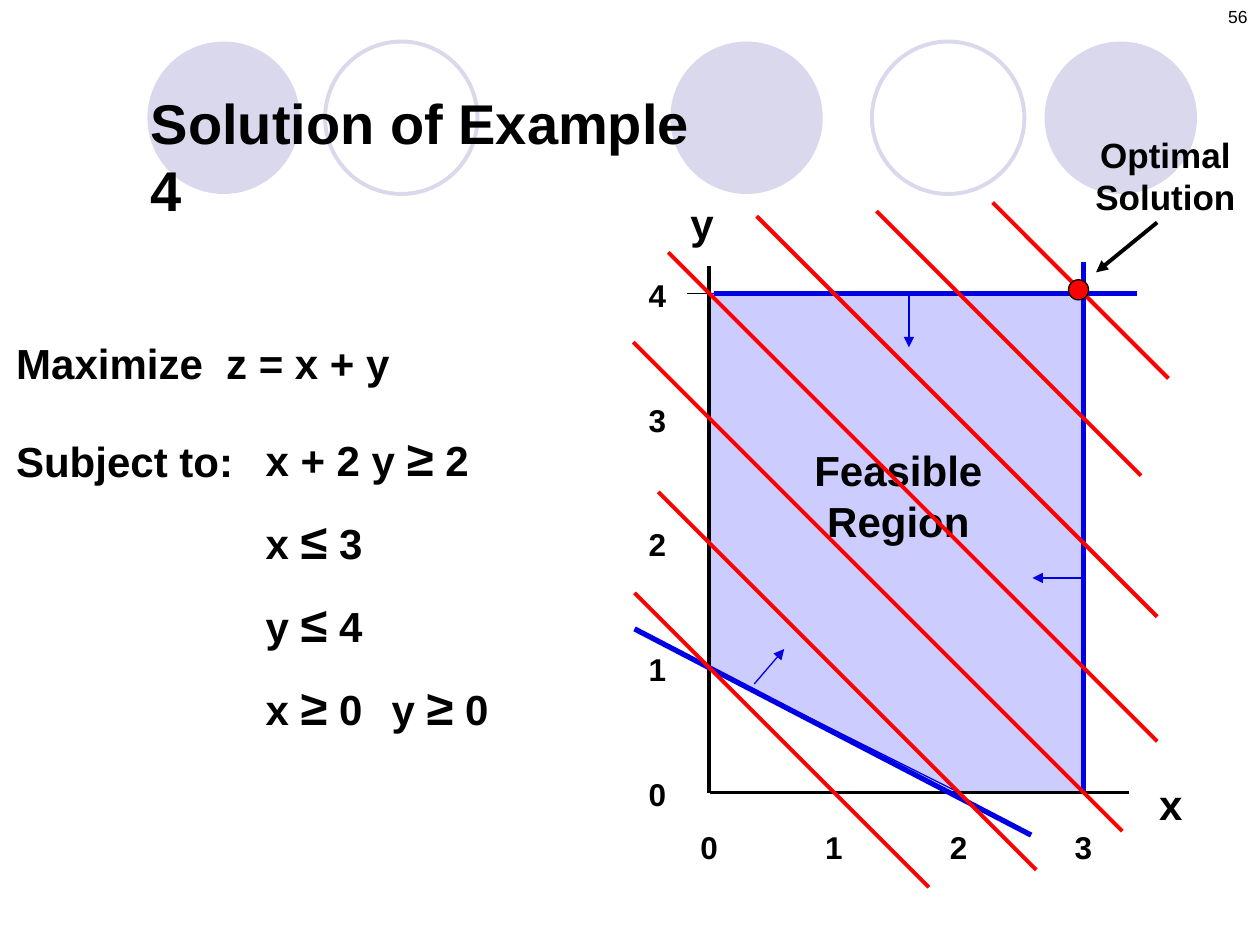
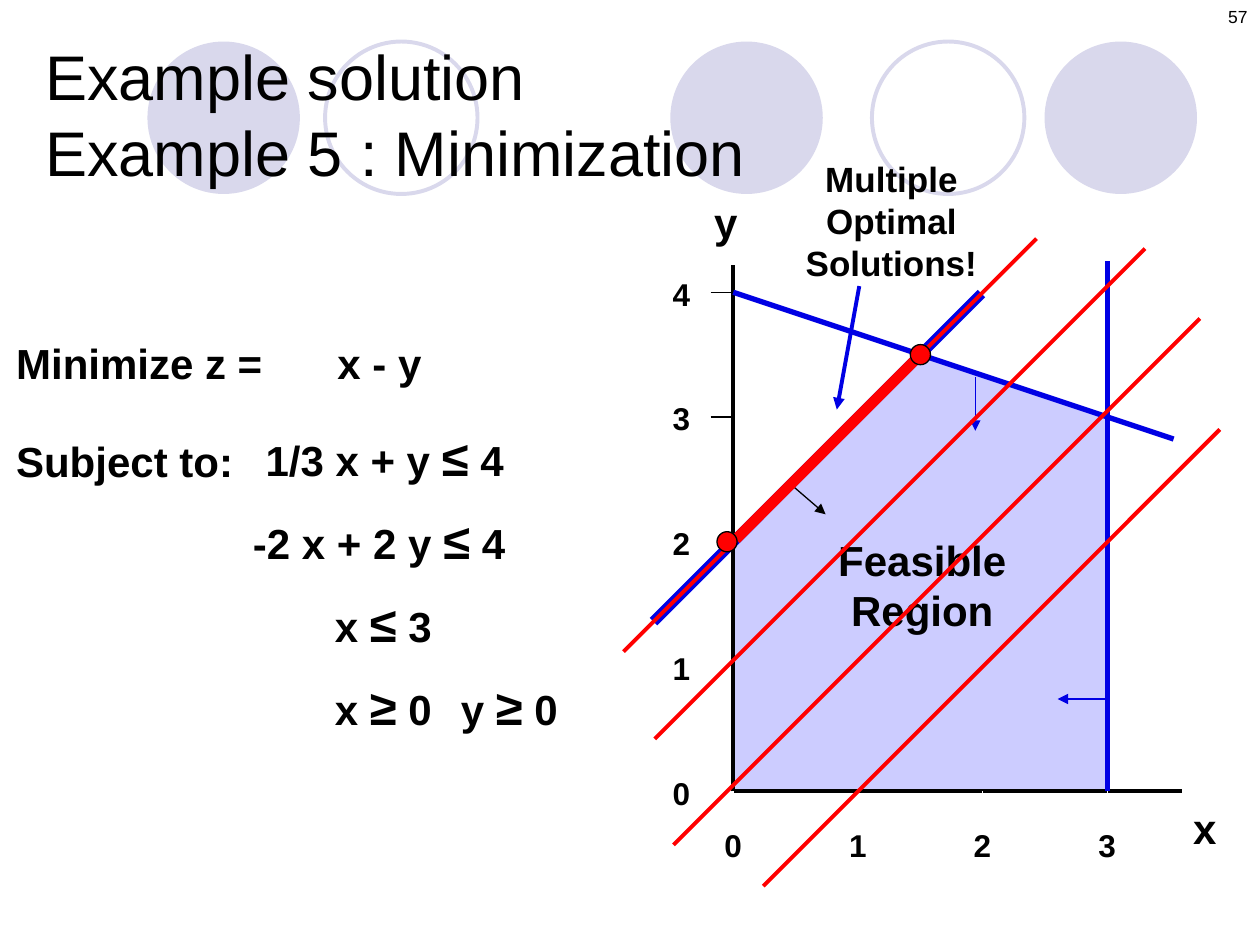
"""Builds two slides that solve linear programs graphically."""
from itertools import groupby

from lxml import etree
from pptx import Presentation
from pptx.dml.color import RGBColor
from pptx.enum.shapes import MSO_CONNECTOR, MSO_SHAPE
from pptx.enum.text import MSO_ANCHOR, PP_ALIGN
from pptx.oxml.ns import qn
from pptx.util import Inches, Pt

STRAIGHT, OVAL = MSO_CONNECTOR.STRAIGHT, MSO_SHAPE.OVAL
LEFT, CENTER, RIGHT = PP_ALIGN.LEFT, PP_ALIGN.CENTER, PP_ALIGN.RIGHT
TOP = MSO_ANCHOR.TOP

BLACK = RGBColor.from_string("000000")
WHITE = RGBColor.from_string("FFFFFF")
BLUE = RGBColor.from_string("0000E4")
RED = RGBColor.from_string("FF0000")
LILAC = RGBColor.from_string("D9D8EC")
REGION = RGBColor.from_string("CCCCFF")

FONT = "Arial"
UNIT = 0.99
THIN, MEDIUM, THICK, BAND = 0.75, 2.25, 3, 6
CIRCLE, DOT = 1.21, 0.16
FILLED_CIRCLES = [1.17, 5.32, 8.29]
OPEN_CIRCLES = [2.58, 6.92]
DOWN, INWARD = (0, -0.43), (-0.39, 0)
FORMULA_TOP, FORMULA_STEP = 3.34, 0.66

SLIDES = [
    {
        "number": "56",
        "title": (["Solution of Example 4"], (1.1, 0.65, 4.6, 1.15), 32, True),
        "origin": (5.63, 6.29),
        "x_axis": 3.33,
        "x_name": (3.47, -0.16),
        "black_ticks": [4],
        "region": [(0, 1), (2, 0), (3, 0), (3, 4), (0, 4)],
        "region_line": BLUE,
        "region_label": 2.81,
        "constraints": [(0, 4, 0.04, 3.43, THICK), (-0.52, 1, -0.6, 2.58, THICK)],
        "arrows": [
            ((1.6, 4), DOWN, BLUE, THIN),
            ((2.98, 1.72), INWARD, BLUE, THIN),
            ((0.36, 0.87), (0.24, 0.28), BLUE, THIN),
            ((3.59, 4.57), (-0.49, -0.4), BLACK, MEDIUM),
        ],
        "slope": -1,
        "levels": [(1, -0.6, 1.76), (2, -0.41, 2.62), (3, -0.61, 3.31),
                   (4, -0.33, 3.59), (5, 0.38, 3.59), (6, 1.34, 3.46),
                   (7, 2.27, 3.68)],
        "optimal_edge": [],
        "optima": [(2.96, 4.03)],
        "callout": ("Optimal Solution", (8.5, 1.01, 1.5, 0.77)),
        "goal": "Maximize  z = x + y",
        "formulas": [("x + 2 y ≥ 2", 2.01), ("x ≤ 3", 2.01), ("y ≤ 4", 2.01),
                     ("x ≥ 0\ty ≥ 0", 2.01)],
    },
    {
        "number": "57",
        "title": (["Example solution", "Example 5 : Minimization"],
                  (0.26, 0.25, 5.81, 1.31), 36, False),
        "origin": (5.82, 6.28),
        "x_axis": 3.56,
        "x_name": (3.55, 0.04),
        "black_ticks": [3, 4],
        "region": [(0, 0), (0, 2), (1.5, 3.5), (3, 3), (3, 0)],
        "region_line": None,
        "region_label": 2.09,
        "constraints": [(-1 / 3, 4, 0, 3.53, THICK), (1, 2, -0.64, 1.99, BAND)],
        "arrows": [
            ((1.94, 3.32), DOWN, BLUE, THIN),
            ((2.99, 0.74), INWARD, BLUE, THIN),
            ((0.45, 2.47), (0.29, -0.25), BLACK, THIN),
            ((1.01, 4.05), (-0.18, -0.99), BLUE, MEDIUM),
        ],
        "slope": 1,
        "levels": [(2, -0.88, 2.43), (1.05, -0.63, 3.3), (0.05, -0.48, 3.74),
                   (-1, 0.24, 3.9)],
        "optimal_edge": [(1, 2, 0.02, 1.46, BAND)],
        "optima": [(-0.05, 2), (1.5, 3.5)],
        "callout": ("Multiple Optimal Solutions!", (6.29, 1.2, 1.57, 1.1)),
        "goal": "Minimize z =\tx - y",
        "formulas": [("1/3 x + y ≤ 4", 2.01), ("-2 x + 2 y ≤ 4", 1.91),
                     ("x ≤ 3", 2.56), ("x ≥ 0\ty ≥ 0", 2.56)],
    },
]


def add_text(s, lines, box, size, bold=True, align=LEFT, tab=None):
    tf = s.shapes.add_textbox(*map(Inches, box)).text_frame
    tf.word_wrap = True
    tf.vertical_anchor = TOP
    if align == LEFT:
        tf.margin_right = 0
    for i, line in enumerate(lines):
        p = tf.paragraphs[0] if i == 0 else tf.add_paragraph()
        p.alignment = align
        if tab:
            tabs = etree.SubElement(p._p.get_or_add_pPr(), qn("a:tabLst"))
            etree.SubElement(tabs, qn("a:tab"), pos=str(Inches(tab)), algn="l")
        for is_sign, chars in groupby(line, lambda c: c in "≤≥"):
            r = p.add_run()
            r.text = "".join(chars)
            r.font.name = FONT
            r.font.size = Pt(size + 4 if is_sign else size)
            r.font.bold = bold
            r.font.color.rgb = BLACK


def add_line(s, start, end, color, width, arrow=False):
    c = s.shapes.add_connector(STRAIGHT, *map(Inches, (*start, *end)))
    c.line.color.rgb = color
    c.line.width = Pt(width)
    if arrow:
        etree.SubElement(c.line._get_or_add_ln(), qn("a:tailEnd"), type="triangle")
    etree.SubElement(c._element.spPr, qn("a:effectLst"))


def paint(sp, fill=None, line=None, width=THIN):
    sp.shadow.inherit = False
    if fill is None:
        sp.fill.background()
    else:
        sp.fill.solid()
        sp.fill.fore_color.rgb = fill
    if line is None:
        sp.line.fill.background()
    else:
        sp.line.color.rgb = line
        sp.line.width = Pt(width)


def add_circle(s, x, y, size, **style):
    paint(s.shapes.add_shape(OVAL, *map(Inches, (x, y, size, size))), **style)


def add_region(s, points, outline):
    start, *rest = [(Inches(x), Inches(y)) for x, y in points]
    builder = s.shapes.build_freeform(*start)
    builder.add_line_segments(rest, close=True)
    paint(builder.convert_to_shape(), REGION, outline)


def add_axes(s, data):
    ox, oy = data["origin"]
    add_line(s, (ox, oy), (ox + data["x_axis"], oy), BLACK, MEDIUM)
    add_line(s, (ox, oy), (ox, oy - 4.18), BLACK, MEDIUM)
    for i in range(4):
        x = ox + i * UNIT
        add_line(s, (x, oy), (x, oy + 0.16), WHITE, THIN)
        add_text(s, [str(i)], (x - 0.17, oy + 0.23, 0.34, 0.4), 18)
    for i in range(5):
        y = oy - i * UNIT
        if i in data["black_ticks"]:
            add_line(s, (ox - 0.18, y), (ox - 0.02, y), BLACK, THIN)
        add_text(s, [str(i)], (ox - 0.58, y - 0.19, 0.34, 0.4), 18)
    for name, (dx, dy) in [("x", data["x_name"]), ("y", (-0.25, -4.77))]:
        add_text(s, [name], (ox + dx, oy + dy, 0.39, 0.5), 24)


def add_formulas(s, data):
    add_text(s, [data["goal"]], (0.03, 2.63, 3.42, 0.5), 24, tab=2.55)
    add_text(s, ["Subject to:"], (0.03, 3.41, 2.2, 0.5), 24)
    for i, (text, x) in enumerate(data["formulas"]):
        add_text(s, [text], (x, FORMULA_TOP + i * FORMULA_STEP, 2.2, 0.57), 24)


def build_slide(prs, data):
    s = prs.slides.add_slide(prs.slide_layouts[6])
    ox, oy = data["origin"]

    def at(u, v):
        return ox + u * UNIT, oy - v * UNIT

    def plot(slope, intercept, u0, u1, width, color):
        ends = [at(u, slope * u + intercept) for u in (u0, u1)]
        add_line(s, *ends, color, width)

    for x in FILLED_CIRCLES:
        add_circle(s, x, 0.33, CIRCLE, fill=LILAC)
    for x in OPEN_CIRCLES:
        add_circle(s, x, 0.33, CIRCLE, line=LILAC, width=MEDIUM)
    add_region(s, [at(*corner) for corner in data["region"]], data["region_line"])
    add_text(s, *data["title"])
    add_axes(s, data)
    for constraint in data["constraints"]:
        plot(*constraint, BLUE)
    add_line(s, at(3, 0), at(3, 4.25), BLUE, THICK)
    for (u, v), (du, dv), color, width in data["arrows"]:
        add_line(s, at(u, v), at(u + du, v + dv), color, width, arrow=True)
    label_box = (ox + 0.67, oy - data["region_label"], 1.66, 0.9)
    add_text(s, ["Feasible Region"], label_box, 24, align=CENTER)
    add_formulas(s, data)
    for level in data["levels"]:
        plot(data["slope"], *level, MEDIUM, RED)
    for edge in data["optimal_edge"]:
        plot(*edge, RED)
    for optimum in data["optima"]:
        x, y = at(*optimum)
        add_circle(s, x - DOT / 2, y - DOT / 2, DOT, fill=RED, line=BLACK)
    text, box = data["callout"]
    add_text(s, [text], box, 20, align=CENTER)
    add_text(s, [data["number"]], (7.67, 0, 2.33, 0.5), 10, bold=False, align=RIGHT)


def main():
    prs = Presentation()
    prs.slide_width, prs.slide_height = Inches(10), Inches(7.5)
    for data in SLIDES:
        build_slide(prs, data)
    prs.save("out.pptx")


if __name__ == "__main__":
    main()
